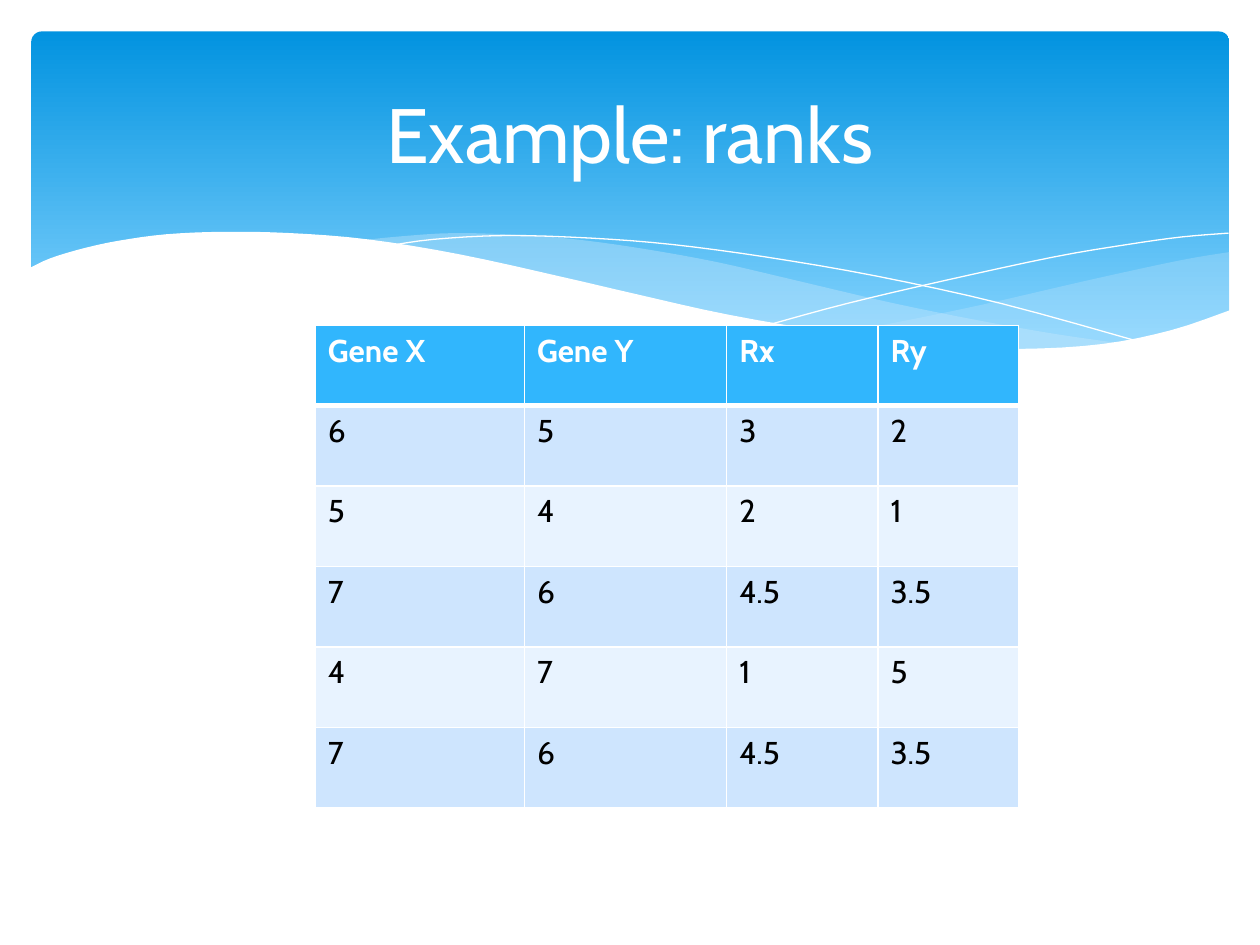
from lxml import etree
from pptx import Presentation
from pptx.dml.color import RGBColor
from pptx.enum.shapes import MSO_SHAPE
from pptx.enum.text import MSO_ANCHOR, PP_ALIGN
from pptx.oxml.ns import qn
from pptx.util import Pt

ROUND = MSO_SHAPE.ROUNDED_RECTANGLE
MIDDLE, CENTER = MSO_ANCHOR.MIDDLE, PP_ALIGN.CENTER

# Content
TITLE = "Example: ranks"
ROWS = [
    ("Gene X", "Gene Y", "Rx", "Ry"),
    ("6", "5", "3", "2"),
    ("5", "4", "2", "1"),
    ("7", "6", "4.5", "3.5"),
    ("4", "7", "1", "5"),
    ("7", "6", "4.5", "3.5"),
]

THEME = {
    "font": "Cabin", "title": 44, "body": 18,
    "white": "FFFFFF", "black": "000000", "wave": "C6E7FC",
    "sky": (("0293E0", 0), ("83D3FE", 0.9)),
    "head": "31B6FD", "bands": ("CEE5FE", "E8F3FF"),
}

# Layout, in points
BANNER = (18, 18, 684.5, 194.5)
HEADING = (36, 26.6, 648, 98.6)
GRID = (180.2, 185.9)
COLS, ROW = (119.5, 115.6, 86.4, 80.4), 46

# Each wave is a list of arcs; an arc is a smooth curve through its knots
SWELL = [
    [(702.7, 144), (673.2, 149), (619.9, 160.6), (560.9, 174.2), (508.3, 185),
     (475.9, 190.8)],
    [(475.9, 190.8), (507.6, 195.1), (545, 198.7), (578.2, 200.2),
     (614.9, 198.7), (645.8, 194.4), (673.2, 188.6), (702.7, 177.8)],
]
RIBBON = [
    [(643, 196.6), (602.6, 190.8), (558, 182.9), (508.3, 172.8), (452.9, 159.8),
     (409.7, 149.8), (370.1, 142.6), (334.8, 137.5), (302.4, 134.6),
     (259.9, 133.2), (225.4, 135.4), (205.9, 137.5)],
    [(205.9, 137.5), (246.2, 143.3), (290.9, 151.9), (323.3, 159.8),
     (381.6, 172.8), (432.7, 183.6), (478.8, 191.5), (519.8, 197.3),
     (556.6, 199.4), (589, 200.2), (617, 199.4), (643, 196.6)],
]
FALL = [[(222.5, 140.4), (247.7, 136.8), (288.7, 134.6), (337.7, 136.1),
         (383.8, 139.7), (437.8, 146.9), (500.4, 157.7), (572.4, 173.5),
         (653, 195.8)]]
RISE = [[(441.4, 185), (483.8, 173.5), (538.6, 160.6), (601.9, 146.9),
         (644.4, 139.7), (675.4, 135.4), (702, 133.2)]]
FRONT = [
    [(703.4, 177.1), (669.6, 188.6), (630, 196.6), (582.5, 199.4),
     (535.7, 197.3), (481, 190.8), (416.9, 180), (362.2, 167.8),
     (321.8, 158.4), (262.8, 145.4), (210.2, 136.8), (165.6, 133.2),
     (127.4, 132.5), (95, 133.9), (68.4, 137.5), (48.2, 141.8),
     (28.8, 147.6), (16.6, 153.4)],
    [(16.6, 236.9), (703.4, 236.9)],
]
# Arcs, fill colour, opacity in percent; no fill means a hairline
WAVES = [
    (SWELL, THEME["wave"], 29),
    (RIBBON, THEME["wave"], 40),
    (FALL, None, 100),
    (RISE, None, 100),
    (FRONT, THEME["white"], 100),
]


def rgb(tone):
    return RGBColor.from_string(tone)


def smooth(knots, steps=4):
    """Catmull-Rom curve through the knots."""
    ends = [knots[0], *knots, knots[-1]]
    out = [knots[0]]
    for a, b, c, d in zip(ends, ends[1:], ends[2:], ends[3:]):
        for i in range(1, steps + 1):
            t = i / steps
            out.append(tuple(
                q + t / 2 * (r - p + t * (2 * p - 5 * q + 4 * r - s
                                          + t * (3 * (q - r) + s - p)))
                for p, q, r, s in zip(a, b, c, d)))
    return out


def wave(slide, arcs, tone, alpha):
    dots = [(Pt(x), Pt(y)) for arc in arcs for x, y in smooth(arc)]
    pen = slide.shapes.build_freeform(*dots[0], scale=1.0)
    pen.add_line_segments(dots[1:], close=tone is not None)
    shape = pen.convert_to_shape()
    shape.shadow.inherit = False
    if tone is None:
        shape.fill.background()
        shape.line.color.rgb = rgb(THEME["white"])
        shape.line.width = Pt(0)
        return
    shape.line.fill.background()
    shape.fill.solid()
    shape.fill.fore_color.rgb = rgb(tone)
    if alpha < 100:
        node = shape.fill._xPr.find(".//" + qn("a:srgbClr"))
        etree.SubElement(node, qn("a:alpha"), val=str(alpha * 1000))


def write(frame, text, tone, **form):
    part = frame.paragraphs[0]
    run = part.add_run()
    run.text = text
    run.font.color.rgb = rgb(tone)
    for key, val in {"name": THEME["font"], **form}.items():
        setattr(run.font, key, val)
    return part


def edge(cell, side, width):
    line = etree.SubElement(cell._tc.get_or_add_tcPr(), qn("a:ln" + side),
                            w=str(Pt(width)))
    fill = etree.SubElement(line, qn("a:solidFill"))
    etree.SubElement(fill, qn("a:srgbClr"), val=THEME["white"])


def banner(slide):
    shape = slide.shapes.add_shape(ROUND, *map(Pt, BANNER))
    shape.shadow.inherit = False
    shape.adjustments[0] = 0.03
    shape.line.fill.background()
    shape.fill.gradient()
    shape.fill.gradient_angle = 270
    for stop, (tone, place) in zip(shape.fill.gradient_stops, THEME["sky"]):
        stop.color.rgb = rgb(tone)
        stop.position = place


def grid(slide):
    size = (sum(COLS), ROW * len(ROWS))
    table = slide.shapes.add_table(len(ROWS), len(COLS),
                                   *map(Pt, GRID + size)).table
    for col, width in zip(table.columns, COLS):
        col.width = Pt(width)
    for i, row in enumerate(ROWS):
        table.rows[i].height = Pt(ROW)
        head = i == 0
        back = THEME["head"] if head else THEME["bands"][(i - 1) % 2]
        tone = THEME["white"] if head else THEME["black"]
        # The rule under the header is thicker
        rules = {"L": 1, "R": 1, "T": 3 if i == 1 else 1, "B": 3 if head else 1}
        for j, text in enumerate(row):
            cell = table.cell(i, j)
            for side, width in rules.items():
                edge(cell, side, width)
            cell.fill.solid()
            cell.fill.fore_color.rgb = rgb(back)
            write(cell.text_frame, text, tone, size=Pt(THEME["body"]), bold=head)


def heading(slide):
    frame = slide.shapes.add_textbox(*map(Pt, HEADING)).text_frame
    for key, val in {"word_wrap": True, "vertical_anchor": MIDDLE}.items():
        setattr(frame, key, val)
    part = write(frame, TITLE, THEME["white"], size=Pt(THEME["title"]))
    part.alignment = CENTER


def main():
    deck = Presentation()
    deck.slide_width, deck.slide_height = Pt(720), Pt(540)
    slide = deck.slides.add_slide(deck.slide_layouts[6])
    banner(slide)
    for item in WAVES:
        wave(slide, *item)
    grid(slide)
    heading(slide)
    deck.save("out.pptx")


if __name__ == "__main__":
    main()
